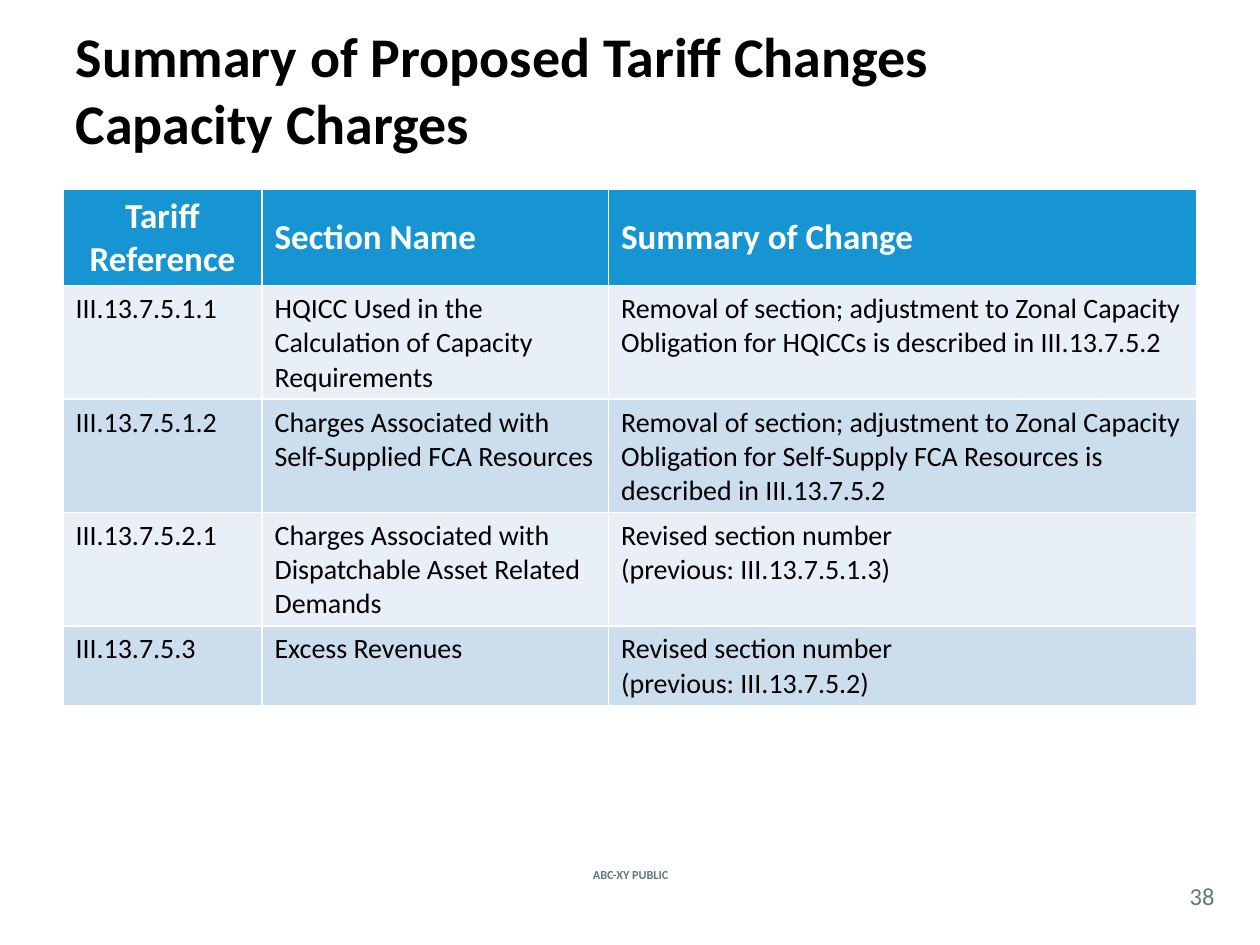
from dataclasses import dataclass

from lxml.etree import SubElement
from pptx import Presentation
from pptx.dml.color import RGBColor
from pptx.enum.text import MSO_ANCHOR, MSO_AUTO_SIZE, PP_ALIGN
from pptx.oxml.ns import qn
from pptx.util import Inches, Pt


@dataclass(frozen=True)
class Theme:
    font: str = "Calibri"
    black: str = "000000"
    white: str = "FFFFFF"
    gray: str = "62777F"
    head: str = "1795D2"
    bands: tuple = ("E8EFF7", "CCDDEE")
    title: int = 32
    label: int = 20
    body: int = 16
    page: int = 14
    foot: int = 7


THEME = Theme()
LEFT, JUST, MID = PP_ALIGN.LEFT, PP_ALIGN.JUSTIFY, PP_ALIGN.CENTER
COLS = (1.58, 2.75, 4.67)
ROWS = (0.67, 0.67, 0.67, 0.67, 0.52)
HEADS = (("Tariff Reference", MID), ("Section Name", LEFT), ("Summary of Change", LEFT))
ITEMS = (
    (("III.13.7.5.1.1", LEFT),
     ("HQICC Used in the Calculation of Capacity Requirements", LEFT),
     ("Removal of section; adjustment to Zonal Capacity Obligation for HQICCs "
      "is described in III.13.7.5.2", LEFT)),
    (("III.13.7.5.1.2", LEFT),
     ("Charges Associated with Self-Supplied FCA Resources", LEFT),
     ("Removal of section; adjustment to Zonal Capacity Obligation for "
      "Self-Supply FCA Resources is described in III.13.7.5.2", LEFT)),
    (("III.13.7.5.2.1", JUST),
     ("Charges Associated with Dispatchable Asset Related Demands", LEFT),
     ("Revised section number\n(previous: III.13.7.5.1.3)", JUST)),
    (("III.13.7.5.3", JUST),
     ("Excess Revenues", LEFT),
     ("Revised section number\n(previous: III.13.7.5.2)", JUST)),
)


def add_run(para, text, size, color, bold=False):
    run = para.add_run()
    run.text = text
    font = run.font
    font.name = THEME.font
    font.size = Pt(size)
    font.bold = bold
    font.color.rgb = RGBColor.from_string(color)


def add_title(slide, box, lines):
    shape = slide.shapes.title
    shape.left, shape.top, shape.width, shape.height = map(Inches, box)
    frame = shape.text_frame
    frame.auto_size = MSO_AUTO_SIZE.NONE
    frame.vertical_anchor = MSO_ANCHOR.MIDDLE
    para = frame.paragraphs[0]
    para.alignment = LEFT
    for i, line in enumerate(lines):
        if i:
            para.add_line_break()
        add_run(para, line, THEME.title, THEME.black, True)


def add_edges(cell):
    props = cell._tc.get_or_add_tcPr()
    for side in ("lnL", "lnR", "lnT", "lnB"):
        line = SubElement(props, qn("a:" + side), w=str(Pt(1)))
        fill = SubElement(line, qn("a:solidFill"))
        SubElement(fill, qn("a:srgbClr"), val=THEME.white)


def fill_cell(cell, text, align, fill, style):
    add_edges(cell)
    cell.fill.solid()
    cell.fill.fore_color.rgb = RGBColor.from_string(fill)
    frame = cell.text_frame
    for i, line in enumerate(text.split("\n")):
        para = frame.add_paragraph() if i else frame.paragraphs[0]
        para.alignment = align
        add_run(para, line, *style)


def add_grid(slide, box):
    table = slide.shapes.add_table(len(ROWS), len(COLS), *map(Inches, box)).table
    for col, width in zip(table.columns, COLS):
        col.width = Inches(width)
    for row, height in zip(table.rows, ROWS):
        row.height = Inches(height)
    for c, (text, align) in enumerate(HEADS):
        cell = table.cell(0, c)
        cell.vertical_anchor = MSO_ANCHOR.MIDDLE
        fill_cell(cell, text, align, THEME.head, (THEME.label, THEME.white, True))
    for r, item in enumerate(ITEMS):
        for c, (text, align) in enumerate(item):
            fill_cell(table.cell(r + 1, c), text, align, THEME.bands[r % 2],
                      (THEME.body, THEME.black))


def add_note(slide, box, text, size, bold=False):
    frame = slide.shapes.add_textbox(*map(Inches, box)).text_frame
    frame.word_wrap = True
    frame.vertical_anchor = MSO_ANCHOR.MIDDLE
    frame.margin_left = frame.margin_right = 0
    frame.margin_top = frame.margin_bottom = 0
    para = frame.paragraphs[0]
    para.alignment = MID
    add_run(para, text, size, THEME.gray, bold)


def main():
    deck = Presentation()
    deck.slide_width, deck.slide_height = Inches(10), Inches(7.5)
    slide = deck.slides.add_slide(deck.slide_layouts[5])
    add_note(slide, (4.27, 6.86, 1.47, 0.17), "ABC-XY PUBLIC", THEME.foot, True)
    add_note(slide, (9.33, 6.96, 0.42, 0.29), "38", THEME.page)
    add_grid(slide, (0.5, 1.5, 9, sum(ROWS)))
    add_title(slide, (0.5, 0.08, 9, 1.25),
              ("Summary of Proposed Tariff Changes", "Capacity Charges"))
    deck.save("out.pptx")


if __name__ == "__main__":
    main()
